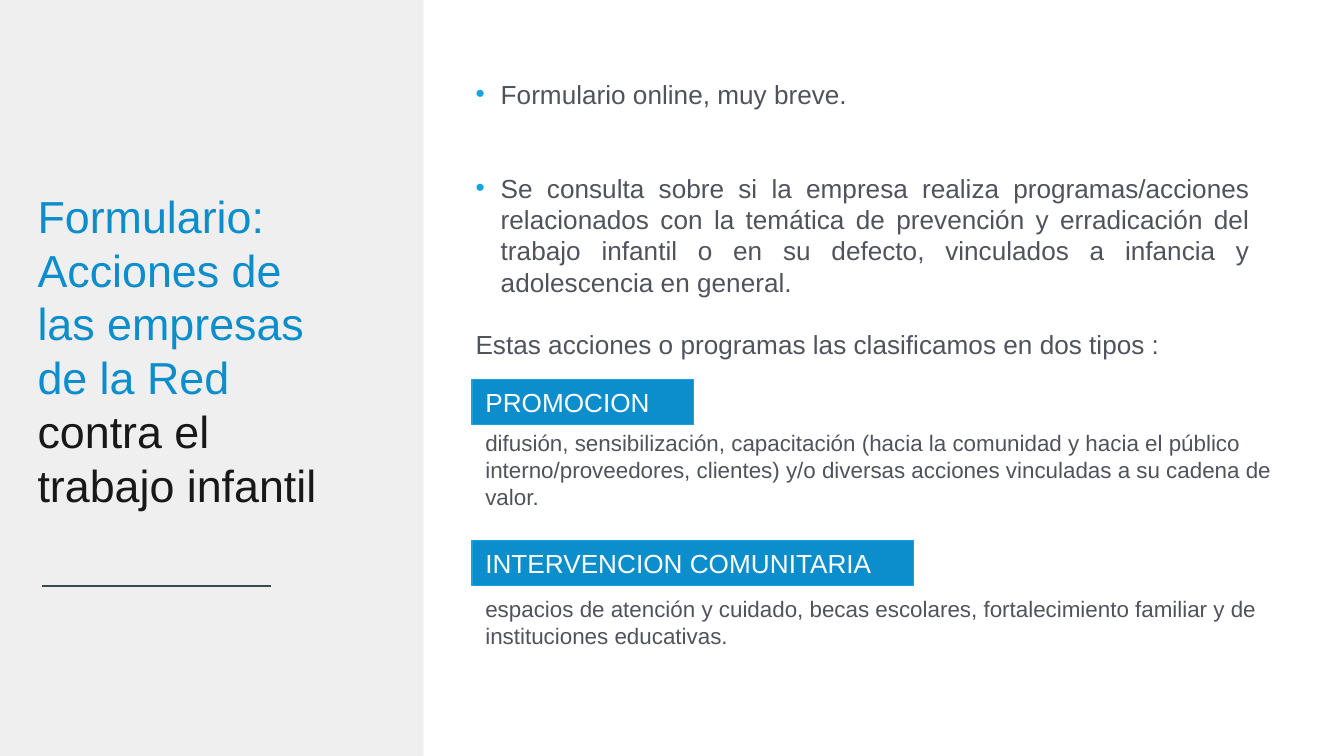
"""Slide on the form about company actions against child labour."""
from lxml import etree
from pptx import Presentation
from pptx.dml.color import RGBColor
from pptx.enum import shapes, text
from pptx.oxml import ns
from pptx.util import Pt

COLORS = {
    "panel": "EFEFEF", "blue": "0C8DCC", "bright": "14A4DE",
    "dark": "181818", "gray": "50535C", "rule": "3A4950", "white": "FFFFFF",
}


def color(name):
    return RGBColor.from_string(COLORS[name])


def write(frame, content, size=14, ink="gray", align=text.PP_ALIGN.LEFT,
          before=0, bullet=False, new=True):
    frame.word_wrap = True
    paragraph = frame.paragraphs[-1]
    if new and paragraph.runs:
        paragraph = frame.add_paragraph()
    if new:
        paragraph.alignment = align
        paragraph.line_spacing = Pt(size * 1.2)
        paragraph.space_before = Pt(before)
    if bullet:
        properties = paragraph._p.get_or_add_pPr()
        properties.set("marL", str(Pt(13.5)))
        properties.set("indent", str(-Pt(13.5)))
        tint = etree.SubElement(properties, ns.qn("a:buClr"))
        etree.SubElement(tint, ns.qn("a:srgbClr"), val=COLORS["bright"])
        etree.SubElement(properties, ns.qn("a:buFont"), typeface="Arial")
        etree.SubElement(properties, ns.qn("a:buChar"), char="•")
    run = paragraph.add_run()
    run.text = content
    run.font.name = "Arial"
    run.font.size = Pt(size)
    run.font.color.rgb = color(ink)


deck = Presentation()
deck.slide_width, deck.slide_height = Pt(720), Pt(405)
slide = deck.slides.add_slide(deck.slide_layouts[6])
parts = slide.shapes

panel = parts.add_shape(shapes.MSO_SHAPE.RECTANGLE, 0, 0, Pt(226.8), Pt(405))
panel.shadow.inherit = False
panel.fill.solid()
panel.fill.fore_color.rgb = color("panel")
panel.line.fill.background()

title = parts.add_textbox(Pt(13), Pt(97.5), Pt(176.4), Pt(211)).text_frame
write(title, "Formulario:", size=24, ink="blue")
write(title, "Acciones de las empresas de la Red ", size=24, ink="blue")
write(title, "contra el trabajo infantil", size=24, ink="dark", new=False)

rule = parts.add_connector(shapes.MSO_CONNECTOR.STRAIGHT,
                           Pt(145), Pt(313.9), Pt(22.4), Pt(313.9))
rule.line.color.rgb = color("rule")
rule.line.width = Pt(0.75)
etree.SubElement(rule._element.spPr, ns.qn("a:effectLst"))

summary = parts.add_textbox(Pt(247.7), Pt(38.2), Pt(429.1), Pt(160)).text_frame
points = [
    ("Formulario online, muy breve.", 0, True),
    ("Se consulta sobre si la empresa realiza programas/acciones relacionados "
     "con la temática de prevención y erradicación del trabajo infantil o en su "
     "defecto, vinculados a infancia y adolescencia en general.", 33.6, True),
    ("Estas acciones o programas las clasificamos en dos tipos :", 16.8, False),
]
for point, gap, bulleted in points:
    write(summary, point, align=text.PP_ALIGN.JUSTIFY, before=gap, bullet=bulleted)

kinds = [
    ("PROMOCION", 203.2, 118.8,
     "difusión, sensibilización, capacitación (hacia la comunidad y hacia el "
     "público interno/proveedores, clientes) y/o diversas acciones vinculadas a "
     "su cadena de valor.", 226.3, 445.7, 51),
    ("INTERVENCION COMUNITARIA", 289.5, 236.4,
     "espacios de atención y cuidado, becas escolares, fortalecimiento familiar "
     "y de instituciones educativas.", 315.4, 452.2, 36),
]
for kind, top, width, detail, detail_top, detail_width, detail_height in kinds:
    label = parts.add_shape(shapes.MSO_SHAPE.RECTANGLE,
                            Pt(252.9), Pt(top), Pt(width), Pt(24.3))
    label.shadow.inherit = False
    label.fill.solid()
    label.fill.fore_color.rgb = color("blue")
    label.line.color.rgb = color("bright")
    label.line.width = Pt(0.75)
    label.text_frame.vertical_anchor = text.MSO_ANCHOR.TOP
    write(label.text_frame, kind, ink="white")
    description = parts.add_textbox(Pt(252.9), Pt(detail_top),
                                    Pt(detail_width), Pt(detail_height))
    write(description.text_frame, detail, size=12)

deck.save("out.pptx")
